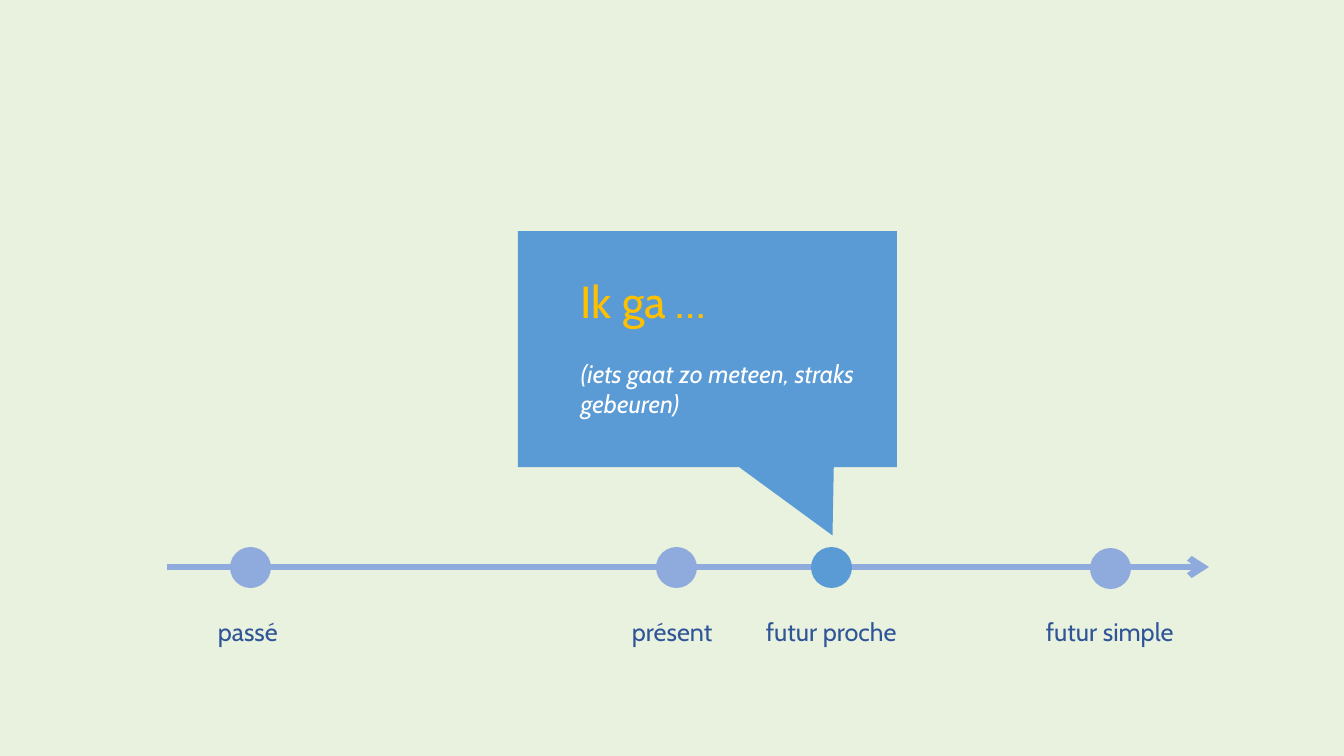
from lxml.etree import SubElement
from pptx import Presentation
from pptx.dml.color import RGBColor
from pptx.enum.shapes import MSO_CONNECTOR, MSO_SHAPE
from pptx.oxml.ns import qn
from pptx.util import Emu, Pt

PX = 914400 / 100.8
FONT = "Cabin"
PALE_GREEN = RGBColor(0xE9, 0xF1, 0xDF)
PERIWINKLE = RGBColor(0x8F, 0xAA, 0xDC)
BLUE = RGBColor(0x5B, 0x9B, 0xD5)
NAVY = RGBColor(0x2F, 0x55, 0x97)
GOLD = RGBColor(0xFF, 0xC0, 0x00)
WHITE = RGBColor(0xFF, 0xFF, 0xFF)

# label, label left, label width, dot left, dot top, dot colour
TENSES = [
    ("passé", 208, 126, 230, 547, PERIWINKLE),
    ("présent", 622, 126, 656, 547, PERIWINKLE),
    ("futur proche", 756, 219, 811, 547, BLUE),
    ("futur simple", 1036, 219, 1090, 548, PERIWINKLE),
]
HEADING = "Ik ga …"
EXPLANATION = "(iets gaat zo meteen, straks gebeuren)"
AXIS_LEFT, AXIS_RIGHT, AXIS_Y = 167, 1209, 567
DOT, LABEL_TOP, LABEL_HEIGHT = 41, 611, 40


def px(*lengths):
    return [Emu(round(n * PX)) for n in lengths]


def add_text(slide, box, *paragraphs):
    """Add a text box; each paragraph is (text, format keywords)."""
    tf = slide.shapes.add_textbox(*px(*box)).text_frame
    tf.word_wrap = True
    for i, (text, fmt) in enumerate(paragraphs):
        p = tf.add_paragraph() if i else tf.paragraphs[0]
        write(p, text, **fmt)


def write(p, text, size=18, color=NAVY, italic=False, before=0):
    p.space_before = Pt(before)
    r = p.add_run()
    r.text = text
    r.font.name, r.font.size, r.font.italic = FONT, Pt(size), italic
    r.font.color.rgb = color


def add_shape(slide, kind, box, color):
    sp = slide.shapes.add_shape(kind, *px(*box))
    sp.shadow.inherit = False
    sp.fill.solid()
    sp.fill.fore_color.rgb = color
    sp.line.fill.background()
    return sp


def add_axis(slide):
    axis = slide.shapes.add_connector(
        MSO_CONNECTOR.STRAIGHT, *px(AXIS_LEFT, AXIS_Y, AXIS_RIGHT, AXIS_Y))
    axis.line.color.rgb = PERIWINKLE
    axis.line.width = Pt(4.5)
    SubElement(axis.line._get_or_add_ln(), qn("a:tailEnd"), type="arrow")
    SubElement(axis._element.spPr, qn("a:effectLst"))


def main():
    prs = Presentation()
    prs.slide_width, prs.slide_height = px(1344, 756)
    slide = prs.slides.add_slide(prs.slide_layouts[6])
    slide.background.fill.solid()
    slide.background.fill.fore_color.rgb = PALE_GREEN

    add_axis(slide)
    for label, left, width, dot_left, dot_top, color in TENSES:
        add_text(slide, (left, LABEL_TOP, width, LABEL_HEIGHT), (label, {}))
        add_shape(slide, MSO_SHAPE.OVAL, (dot_left, dot_top, DOT, DOT), color)

    callout = add_shape(slide, MSO_SHAPE.RECTANGULAR_CALLOUT,
                        (518, 231, 379, 236), BLUE)
    callout.adjustments[0] = 0.33
    callout.adjustments[1] = 0.79
    add_text(slide, (571, 269, 370, 156),
             (HEADING, dict(size=32, color=GOLD)),
             (EXPLANATION, dict(color=WHITE, italic=True, before=22)))
    prs.save("out.pptx")


if __name__ == "__main__":
    main()
